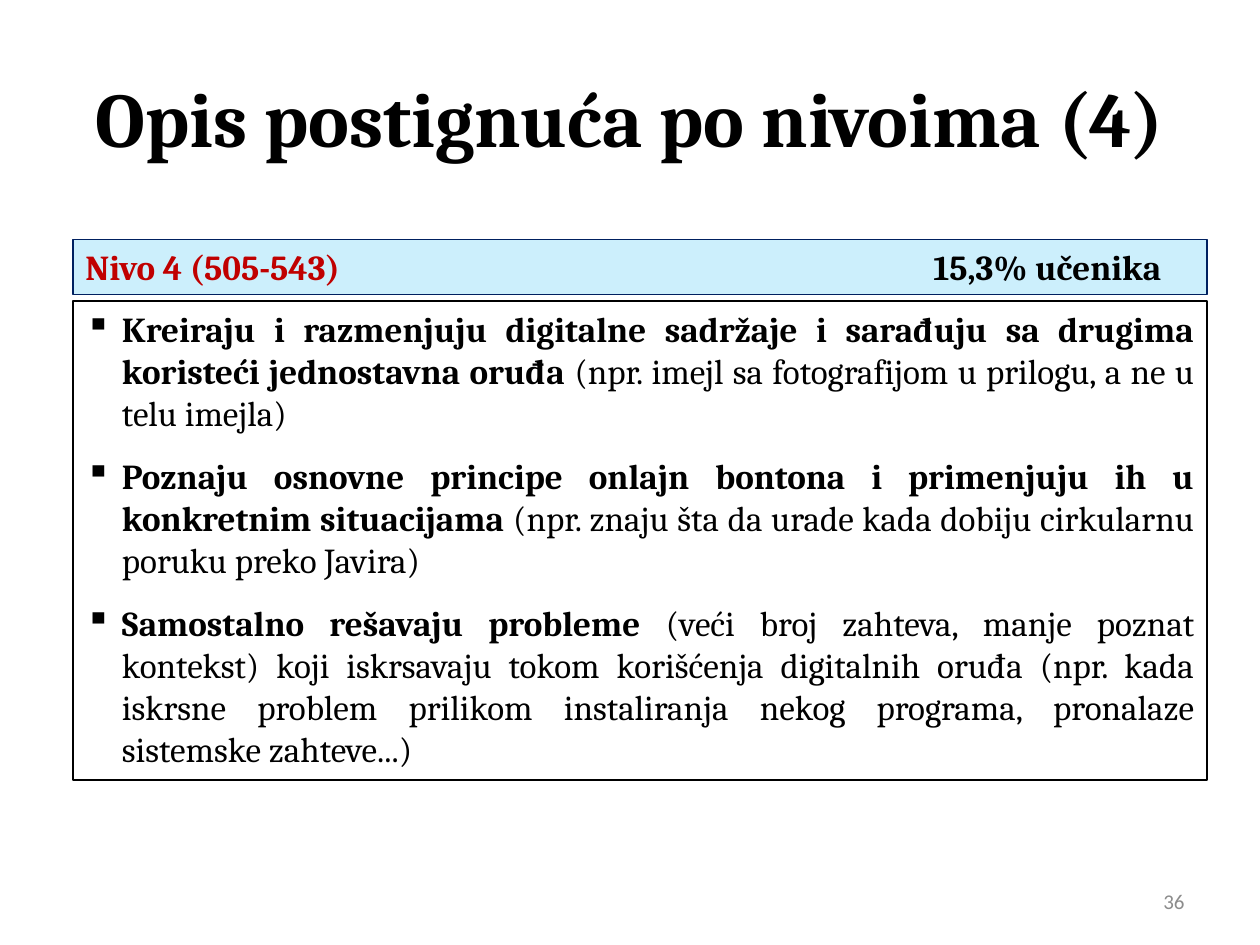
from lxml import etree
from pptx import Presentation
from pptx.dml.color import RGBColor
from pptx.enum.shapes import MSO_SHAPE
from pptx.enum.text import MSO_ANCHOR, PP_ALIGN
from pptx.oxml.ns import qn
from pptx.util import Inches, Pt

LEFT, CENTER, RIGHT, JUSTIFY = PP_ALIGN.LEFT, PP_ALIGN.CENTER, PP_ALIGN.RIGHT, PP_ALIGN.JUSTIFY
TOP, MIDDLE = MSO_ANCHOR.TOP, MSO_ANCHOR.MIDDLE
RECTANGLE = MSO_SHAPE.RECTANGLE

BLACK = RGBColor(0x00, 0x00, 0x00)
GRAY = RGBColor(0x8C, 0x8C, 0x8C)
RED = RGBColor(0xC0, 0x00, 0x00)
NAVY = RGBColor(0x00, 0x20, 0x60)
SKY = RGBColor(0x00, 0xB0, 0xF0)

SKILLS = [
    ("Kreiraju i razmenjuju digitalne sadržaje i sarađuju sa drugima koristeći jednostavna oruđa ",
     "(npr. imejl sa fotografijom u prilogu, a ne u telu imejla)"),
    ("Poznaju osnovne principe onlajn bontona i primenjuju ih u konkretnim situacijama ",
     "(npr. znaju šta da urade kada dobiju cirkularnu poruku preko Javira)"),
    ("Samostalno rešavaju probleme",
     " (veći broj zahteva, manje poznat kontekst) koji iskrsavaju tokom korišćenja digitalnih "
     "oruđa (npr. kada iskrsne problem prilikom instaliranja nekog programa, pronalaze "
     "sistemske zahteve...)"),
]


def add_run(paragraph, text, size=20, font="Cambria", color=BLACK, bold=False):
    run = paragraph.add_run()
    run.text = text
    run.font.size = Pt(size)
    run.font.name = font
    run.font.color.rgb = color
    run.font.bold = bold


def add_label(slide, box, text, align, **text_format):
    frame = slide.shapes.add_textbox(*box).text_frame
    frame.word_wrap = True
    frame.vertical_anchor = MIDDLE
    frame.paragraphs[0].alignment = align
    add_run(frame.paragraphs[0], text, **text_format)


def add_panel(slide, box, border):
    panel = slide.shapes.add_shape(RECTANGLE, *box)
    panel.shadow.inherit = False
    panel.fill.background()
    panel.line.color.rgb = border
    panel.line.width = Pt(0.75)
    panel.text_frame.word_wrap = True
    panel.text_frame.vertical_anchor = TOP
    return panel


def add_level_header(slide, box, level, share):
    """Tinted bar with the level at the left and its share at a right tab stop."""
    bar = add_panel(slide, box, NAVY)
    bar.fill.solid()
    bar.fill.fore_color.rgb = SKY
    color = bar.fill._xPr.find(qn("a:solidFill"))[0]
    etree.SubElement(color, qn("a:alpha"), val="20000")

    heading = bar.text_frame.paragraphs[0]
    heading.alignment = LEFT
    tabs = etree.SubElement(heading._p.get_or_add_pPr(), qn("a:tabLst"))
    etree.SubElement(tabs, qn("a:tab"), pos=str(Inches(8.54)), algn="r")
    add_run(heading, level + "\t", color=RED, bold=True)
    add_run(heading, share, bold=True)


def set_bullet(paragraph, indent):
    properties = paragraph._p.get_or_add_pPr()
    properties.set("marL", str(indent))
    properties.set("indent", str(-indent))
    etree.SubElement(properties, qn("a:buChar"), char="▪")


def add_skills(slide, box, skills):
    frame = add_panel(slide, box, BLACK).text_frame
    for index, (skill, example) in enumerate(skills):
        item = frame.add_paragraph() if index else frame.paragraphs[0]
        item.alignment = JUSTIFY
        item.space_before = item.space_after = Pt(6)
        set_bullet(item, Inches(0.29))
        add_run(item, skill, bold=True)
        add_run(item, example)


def main():
    presentation = Presentation()
    presentation.slide_width, presentation.slide_height = Inches(10), Inches(7.5)
    slide = presentation.slides.add_slide(presentation.slide_layouts[6])

    add_label(slide, (Inches(0.5), Inches(0.3), Inches(9), Inches(1.25)),
              "Opis postignuća po nivoima (4)", CENTER, size=44, bold=True)
    add_label(slide, (Inches(7.17), Inches(6.95), Inches(2.33), Inches(0.4)),
              "36", RIGHT, size=12, font="Calibri", color=GRAY)

    left, width = Inches(0.58), Inches(9)
    add_skills(slide, (left, Inches(2.39), width, Inches(3.8)), SKILLS)
    add_level_header(slide, (left, Inches(1.9), width, Inches(0.44)),
                     "Nivo 4 (505-543)", "15,3% učenika")
    presentation.save("out.pptx")


if __name__ == "__main__":
    main()
